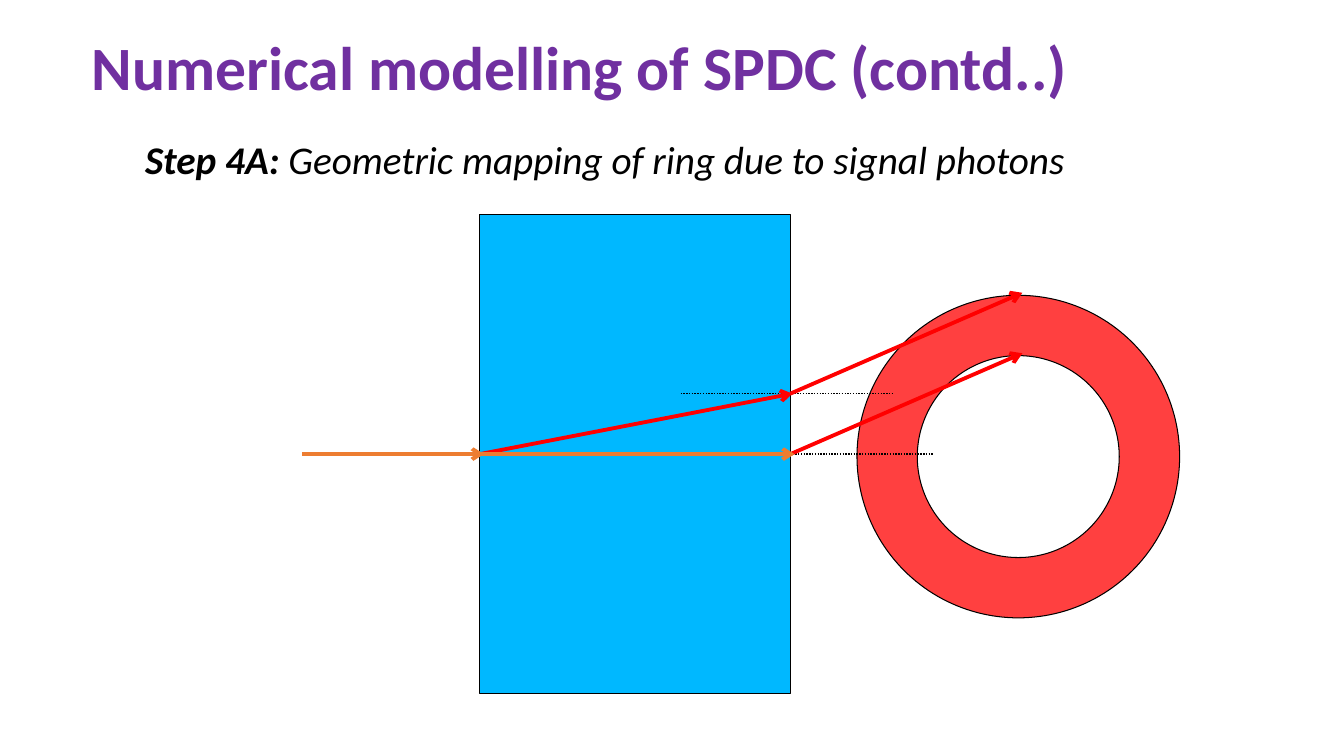
from dataclasses import dataclass

from lxml import etree
from pptx import Presentation
from pptx.dml.color import RGBColor
from pptx.enum.dml import MSO_LINE_DASH_STYLE as Dash
from pptx.enum.shapes import MSO_CONNECTOR as Connector, MSO_SHAPE as Shape
from pptx.enum.text import MSO_ANCHOR as Anchor, MSO_AUTO_SIZE as AutoSize, PP_ALIGN as Align
from pptx.oxml.ns import qn
from pptx.util import Inches, Pt


@dataclass(frozen=True)
class Theme:
    font: str = "Calibri"
    title_size: float = 44
    step_size: float = 28
    outline_width: float = 0.75
    guide_width: float = 1
    ray_width: float = 2.75
    title: RGBColor = RGBColor(0x70, 0x30, 0xA0)
    ink: RGBColor = RGBColor(0, 0, 0)
    crystal: RGBColor = RGBColor(0x00, 0xB8, 0xFF)
    signal: RGBColor = RGBColor(0xFF, 0, 0)
    pump: RGBColor = RGBColor(0xED, 0x7D, 0x31)
    ring_opacity: int = 75


THEME = Theme()


def style_run(run, size, color, bold, italic=False):
    font = run.font
    font.name, font.size = THEME.font, Pt(size)
    font.bold, font.italic = bold, italic
    font.color.rgb = color


def add_title(slide, box):
    title = slide.shapes.title
    title.left, title.top, title.width, title.height = map(Inches, box)
    frame = title.text_frame
    frame.text = "Numerical modelling of SPDC (contd..)"
    frame.auto_size = AutoSize.NONE
    frame.vertical_anchor = Anchor.MIDDLE
    paragraph = frame.paragraphs[0]
    paragraph.alignment, paragraph.line_spacing = Align.LEFT, 0.9
    style_run(paragraph.runs[0], THEME.title_size, THEME.title, bold=True)


def add_step(slide, box):
    frame = slide.shapes.add_textbox(*map(Inches, box)).text_frame
    frame.word_wrap = False
    frame.auto_size = AutoSize.SHAPE_TO_FIT_TEXT
    paragraph = frame.paragraphs[0]
    paragraph.alignment = Align.LEFT
    for text, bold in (
        ("Step 4A: ", True),
        ("Geometric mapping of ring due to signal photons", False),
    ):
        run = paragraph.add_run()
        run.text = text
        style_run(run, THEME.step_size, THEME.ink, bold, italic=True)


def add_outlined(shapes, kind, box, fill):
    shape = shapes.add_shape(kind, *map(Inches, box))
    shape.shadow.inherit = False
    shape.fill.solid()
    shape.fill.fore_color.rgb = fill
    shape.line.color.rgb = THEME.ink
    shape.line.width = Pt(THEME.outline_width)
    return shape


def add_line(shapes, start, end, color, width):
    connector = shapes.add_connector(Connector.STRAIGHT, *map(Inches, (*start, *end)))
    connector.line.color.rgb = color
    connector.line.width = Pt(width)
    etree.SubElement(connector.element.spPr, qn("a:effectLst"))
    return connector


def add_ray(shapes, start, end, color):
    ray = add_line(shapes, start, end, color, THEME.ray_width)
    etree.SubElement(ray.line._get_or_add_ln(), qn("a:tailEnd"), type="arrow")


def add_guide(shapes, start, length):
    x, y = start
    guide = add_line(shapes, start, (x + length, y), THEME.ink, THEME.guide_width)
    guide.line.dash_style = Dash.ROUND_DOT


def add_diagram(slide, box):
    left, top, width, height = box
    shapes = slide.shapes.add_group_shape().shapes
    entry = left + 1.76
    crystal_width = 3.08
    exit_face = entry + crystal_width
    axis = top + height / 2
    split = 0.6  # height of the refracted ray at the exit face

    # Ring of signal photons
    ring_size = 3.2
    ring = add_outlined(
        shapes, Shape.DONUT,
        (left + width - ring_size, top + 0.8, ring_size, ring_size), THEME.signal,
    )
    ring.adjustments[0] = 0.187
    color = ring.fill._xPr.find(qn("a:solidFill"))[0]
    etree.SubElement(color, qn("a:alpha"), val=str(THEME.ring_opacity * 1000))

    # Crystal
    add_outlined(shapes, Shape.RECTANGLE, (entry, top, crystal_width, height), THEME.crystal)

    # Dotted guides along the axis and the exit normal
    add_guide(shapes, (left + 0.92, axis), 5.34)
    add_guide(shapes, (left + 3.75, axis - split), 2.1)

    # Signal rays inside the crystal and out to the ring
    add_ray(shapes, (entry, axis), (exit_face + 0.02, axis - split), THEME.signal)
    for y in (axis - split, axis):
        add_ray(shapes, (exit_face, y), (exit_face + 2.3, y - 1), THEME.signal)

    # Pump beam
    for start, end in ((left, entry + 0.04), (left + 0.08, exit_face + 0.04)):
        add_ray(shapes, (start, axis), (end, axis), THEME.pump)


def main():
    presentation = Presentation()
    presentation.slide_width = Inches(13.33)
    presentation.slide_height = Inches(7.5)
    slide = presentation.slides.add_slide(presentation.slide_layouts.get_by_name("Title Only"))
    add_title(slide, (0.81, 0.13, 11.5, 1.14))
    add_step(slide, (1.34, 1.29, 9.38, 0.57))
    add_diagram(slide, (3, 2.13, 8.7, 4.75))
    presentation.save("out.pptx")


if __name__ == "__main__":
    main()
